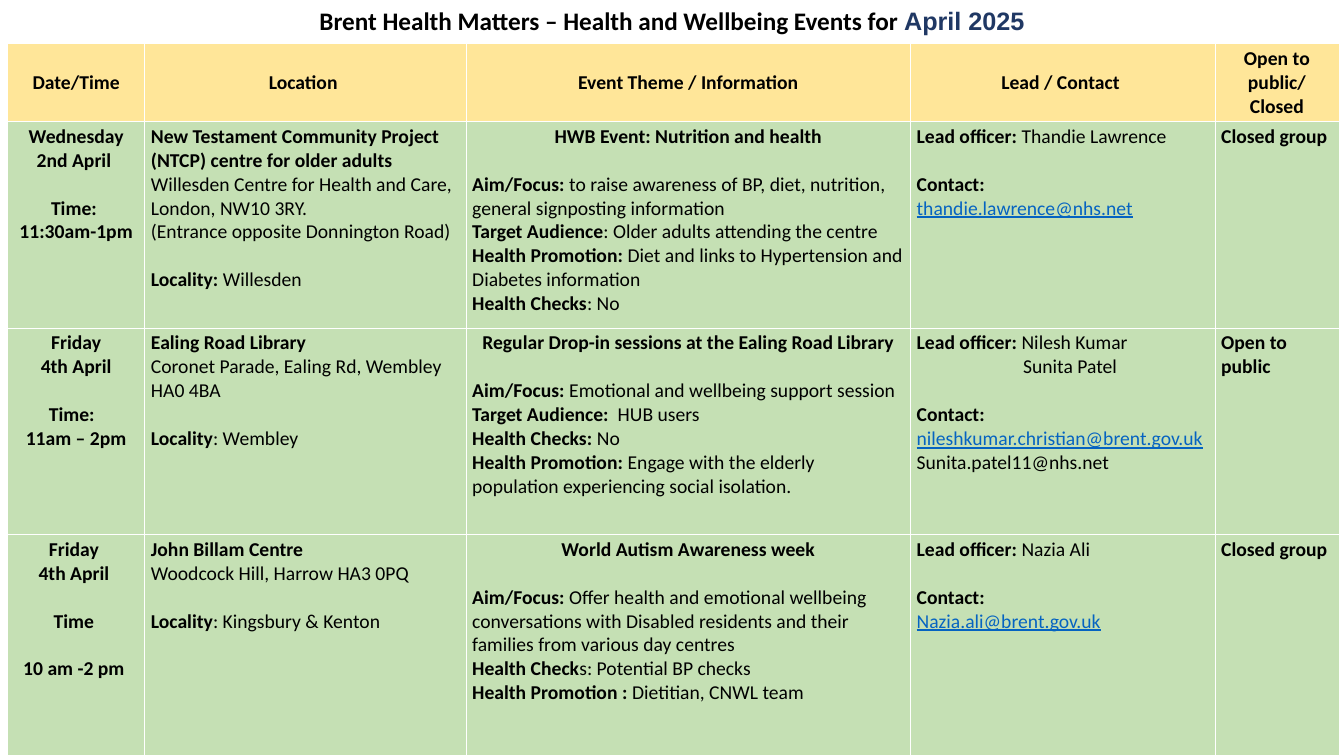
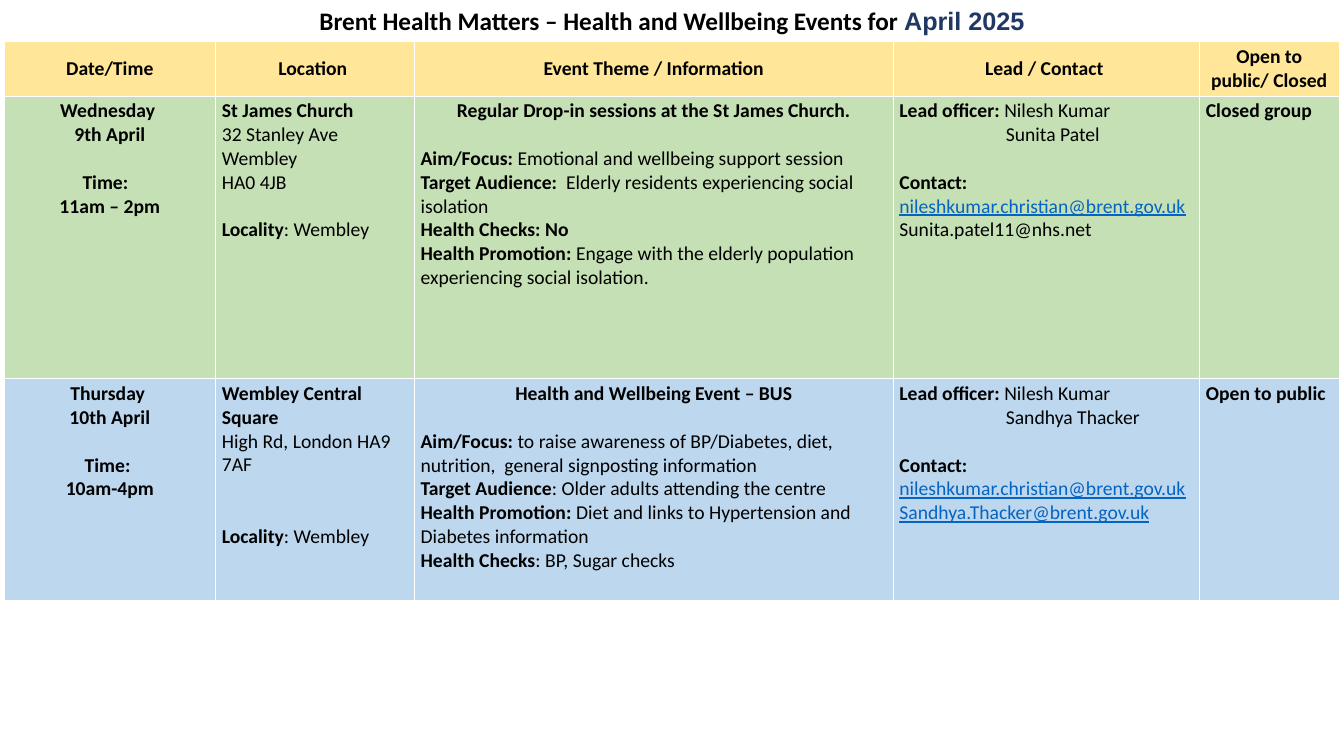
from lxml import etree
from pptx import Presentation
from pptx.dml.color import RGBColor
from pptx.enum.text import MSO_ANCHOR, MSO_AUTO_SIZE, PP_ALIGN
from pptx.oxml.ns import qn
from pptx.util import Pt

# Shared look
SLIDE_WIDTH, SLIDE_HEIGHT = 960, 540
HEADER, GREEN, BLUE = "FFE699", "C5E0B4", "BDD7EE"
BLACK, WHITE, NAVY, LINK = "000000", "FFFFFF", "203864", "0563C1"
LINE_GAP = 17.1
SECOND_OFFICER_INDENT = 76
TITLE_FRAME = dict(left=0, top=0, width=SLIDE_WIDTH, height=44)
CELL_FORMAT = dict(margin_left=4.4, margin_right=4.4, margin_top=2.2, margin_bottom=2.2)

# Content: a cell is a list of groups of lines, one line's gap between groups.
# *bold*, <address shown as a link>, leading tab for a second officer.
TITLE = [("Brent Health Matters – Health and Wellbeing Events for ", "Calibri", BLACK),
         ("April 2025", "Arial", NAVY)]
HEADINGS = ["Date/Time", "Location ", "Event Theme / Information", "Lead / Contact ",
            "Open to public/ Closed"]
SUPPORT = "*Aim/Focus: *Emotional and wellbeing support session"
ISOLATION = ("*Health Promotion: *Engage with the elderly population experiencing "
             "social isolation.")
AWARENESS = [
    "*Aim/Focus: *to raise awareness of {}, diet, nutrition,  general signposting information",
    "*Target Audience*: Older adults attending the centre",
    "*Health Promotion: *Diet and links to Hypertension and Diabetes information",
    "*Health Checks*: {}",
]


def awareness(topic, checks):
    return [line.format(value) for line, value in zip(AWARENESS, (topic, "", "", checks))]


def lead(officers, contacts):
    first, *others = officers
    return [["*Lead officer: *" + first] + ["\t" + name for name in others],
            ["*Contact:*"] + contacts]


NILESH = "<nileshkumar.christian@brent.gov.uk>"
NILESH_AND_SUNITA = lead(["Nilesh Kumar", "Sunita Patel"], [NILESH, "Sunita.patel11@nhs.net"])

SCHEDULES = [
    dict(
        left=5.4, top=31, columns=[98, 229.5, 317.5, 217.5, 88.5],
        heights=[56, 147.5, 147.5, 157.5],
        events=[
            (GREEN,
             [["Wednesday", "2nd April "], ["Time: ", "11:30am-1pm"]],
             [["*New Testament Community Project (NTCP) centre for older adults*",
               "Willesden Centre for Health and Care, London, NW10 3RY.",
               "(Entrance opposite Donnington Road)"],
              ["*Locality: *Willesden"]],
             [["HWB Event: Nutrition and health"], awareness("BP", "No")],
             lead(["Thandie Lawrence"], ["<thandie.lawrence@nhs.net>"]),
             "Closed group"),
            (GREEN,
             [["Friday", "4th April"], ["Time:  ", "11am – 2pm"]],
             [["*Ealing Road Library*", "Coronet Parade, Ealing Rd, Wembley HA0 4BA"],
              ["*Locality*: Wembley"]],
             [["Regular Drop-in sessions at the Ealing Road Library"],
              [SUPPORT, "*Target Audience: * HUB users", "*Health Checks: *No", ISOLATION]],
             NILESH_AND_SUNITA,
             "Open to public"),
            (GREEN,
             [["Friday ", "4th April "], ["Time "], ["10 am -2 pm "]],
             [["*John Billam Centre*", "Woodcock Hill, Harrow HA3 0PQ"],
              ["*Locality*: Kingsbury & Kenton"]],
             [["World Autism Awareness week"],
              ["*Aim/Focus: *Offer health and emotional wellbeing conversations with "
               "Disabled residents and their families from various day centres",
               "*Health Check*s: Potential BP checks",
               "*Health Promotion : *Dietitian, CNWL team"]],
             lead(["Nazia Ali"], ["<Nazia.ali@brent.gov.uk>"]),
             "Closed group"),
        ]),
    dict(
        left=2.9, top=29.5, columns=[151.2, 142, 342, 218.9, 99.4],
        heights=[39, 202, 158],
        events=[
            (GREEN,
             [["Wednesday ", "9th April"], ["Time:  ", "11am – 2pm"]],
             [["*St James Church*", "32 Stanley Ave Wembley", "HA0 4JB"],
              ["*Locality*: Wembley"]],
             [["Regular Drop-in sessions at the St James Church."],
              [SUPPORT, "*Target Audience: * Elderly residents experiencing social isolation",
               "*Health Checks: No*", ISOLATION]],
             NILESH_AND_SUNITA,
             "Closed group"),
            (BLUE,
             [["Thursday ", "10th April"], ["Time: ", "10am-4pm"]],
             [["*Wembley Central Square*", "High Rd, London HA9 7AF"], [],
              ["*Locality*: Wembley"]],
             [["Health and Wellbeing Event – BUS"],
              awareness("BP/Diabetes", "BP, Sugar checks")],
             lead(["Nilesh Kumar", "Sandhya Thacker"],
                  [NILESH, "<Sandhya.Thacker@brent.gov.uk>"]),
             "Open to public"),
        ]),
]


def color(value):
    return RGBColor.from_string(value)


def add_run(paragraph, text, ink=BLACK, **changes):
    run = paragraph.add_run()
    run.text = text
    font_format = dict(name="Calibri", size=Pt(14), bold=False, underline=False) | changes
    for name, value in font_format.items():
        setattr(run.font, name, value)
    run.font.color.rgb = color(ink)


def write_line(paragraph, line):
    if line.startswith("<"):
        add_run(paragraph, line.strip("<>"), LINK, underline=True)
        return
    if line.startswith("\t"):
        paragraph._p.get_or_add_pPr().set("marL", str(Pt(SECOND_OFFICER_INDENT)))
    for position, part in enumerate(line.strip("\t").split("*")):
        if part:
            add_run(paragraph, part, bold=position % 2 == 1)


def fill_cell(cell, groups, background, centred_groups=0, anchor=MSO_ANCHOR.TOP):
    for name, value in CELL_FORMAT.items():
        setattr(cell, name, Pt(value))
    cell.vertical_anchor = anchor

    # White borders
    for side in ("a:lnL", "a:lnR", "a:lnT", "a:lnB"):
        border = etree.SubElement(cell._tc.get_or_add_tcPr(), qn(side), w=str(Pt(0.5)))
        solid = etree.SubElement(border, qn("a:solidFill"))
        etree.SubElement(solid, qn("a:srgbClr"), val=WHITE)
    cell.fill.solid()
    cell.fill.fore_color.rgb = color(background)

    # Centred groups are bold throughout
    paragraph, gap = cell.text_frame.paragraphs[0], 0
    for number, group in enumerate(groups):
        centred = number < centred_groups
        for line in group:
            if paragraph.runs:
                paragraph = cell.text_frame.add_paragraph()
            paragraph.alignment = PP_ALIGN.CENTER if centred else PP_ALIGN.LEFT
            paragraph.space_before = Pt(gap)
            write_line(paragraph, f"*{line}*" if centred else line)
            gap = 0
        gap += LINE_GAP


def add_title(slide):
    title = slide.shapes.title
    for name, value in TITLE_FRAME.items():
        setattr(title, name, Pt(value))
    frame = title.text_frame
    frame_format = dict(word_wrap=True, auto_size=MSO_AUTO_SIZE.NONE,
                        vertical_anchor=MSO_ANCHOR.TOP)
    for name, value in frame_format.items():
        setattr(frame, name, value)
    heading = frame.paragraphs[0]
    heading.alignment = PP_ALIGN.CENTER
    for text, face, ink in TITLE:
        add_run(heading, text, ink, name=face, size=Pt(18), bold=True)


def add_schedule(slide, schedule):
    columns, heights = schedule["columns"], schedule["heights"]
    table = slide.shapes.add_table(
        len(heights), len(columns), Pt(schedule["left"]), Pt(schedule["top"]),
        Pt(sum(columns)), Pt(sum(heights))).table
    table.horz_banding = False
    for column, width in zip(table.columns, columns):
        column.width = Pt(width)
    for row, height in zip(table.rows, heights):
        row.height = Pt(height)

    # Heading row
    for cell, heading in zip(table.rows[0].cells, HEADINGS):
        fill_cell(cell, [[heading]], HEADER, 1, MSO_ANCHOR.MIDDLE)

    # One row for each event
    for number, (background, date, location, theme, contact, access) in enumerate(
            schedule["events"], 1):
        contents = [date, location, theme, contact, [[f"*{access}*"]]]
        centred_groups = [len(date), 0, 1, 0, 0]
        for cell, groups, centred in zip(table.rows[number].cells, contents, centred_groups):
            fill_cell(cell, groups, background, centred)


def main():
    deck = Presentation()
    deck.slide_width, deck.slide_height = Pt(SLIDE_WIDTH), Pt(SLIDE_HEIGHT)
    title_only = deck.slide_layouts[5]
    for schedule in SCHEDULES:
        slide = deck.slides.add_slide(title_only)
        add_title(slide)
        add_schedule(slide, schedule)
    deck.save("out.pptx")


if __name__ == "__main__":
    main()
